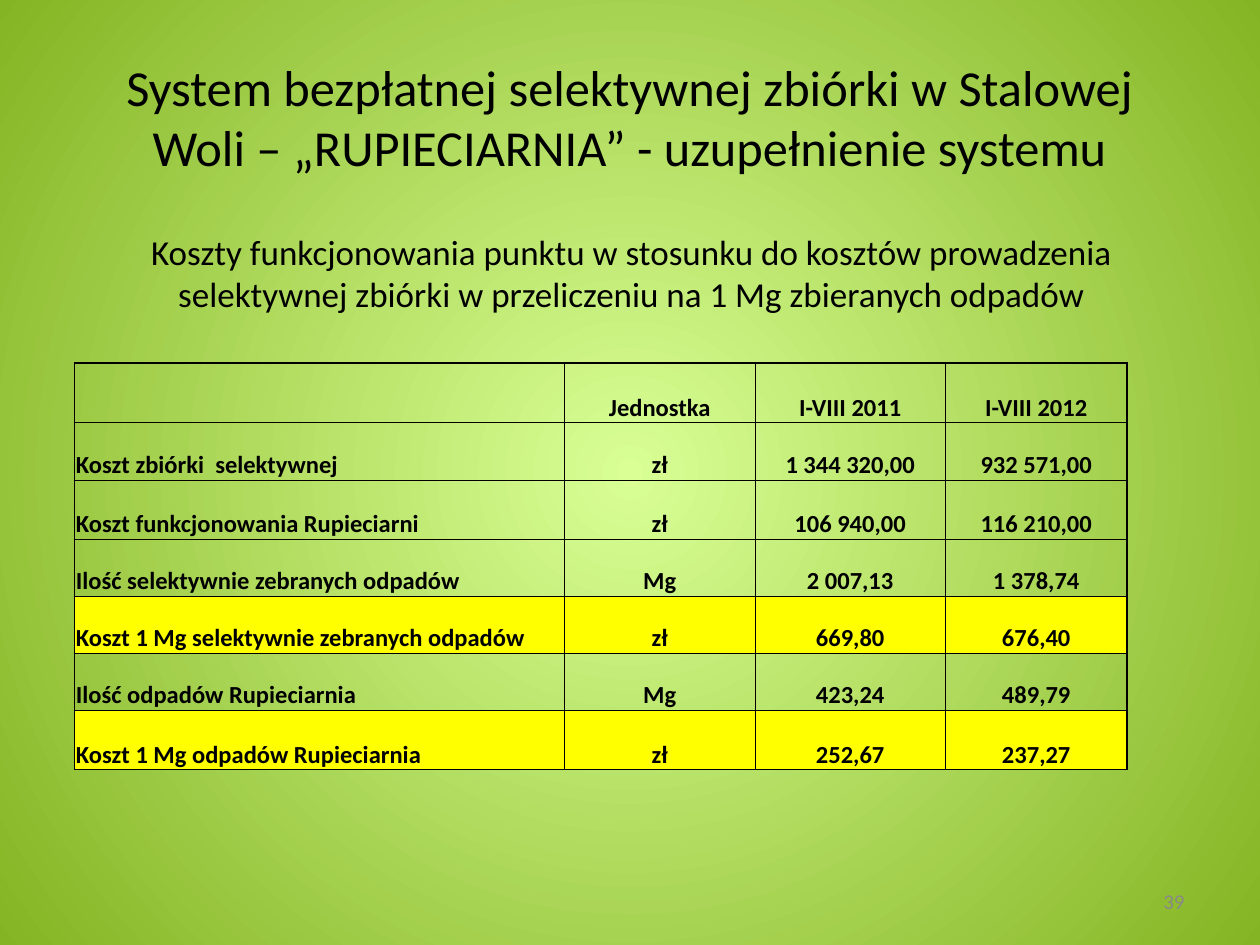
from lxml.etree import SubElement
from pptx import Presentation
from pptx.dml.color import RGBColor
from pptx.enum.text import MSO_ANCHOR, PP_ALIGN
from pptx.oxml import parse_xml
from pptx.oxml.ns import nsdecls, qn
from pptx.util import Cm, Pt

COLORS = {
    "text": "000000",
    "border": "000000",
    "highlight": "FFFF00",
    "center": "D9FF95",
    "edge": "84B423",
    "number": "898989",
}


def write(frame, text, size, color="text", bold=False, align=PP_ALIGN.CENTER,
          anchor=MSO_ANCHOR.TOP):
    frame.word_wrap = True
    frame.vertical_anchor = anchor
    paragraph = frame.paragraphs[0]
    paragraph.alignment = align
    run = paragraph.add_run()
    run.text = text
    run.font.name = "Calibri"
    run.font.size = Pt(size)
    run.font.bold = bold
    run.font.color.rgb = RGBColor.from_string(COLORS[color])
    return paragraph


def add_border(cell, side, position, width):
    cell._tc.get_or_add_tcPr().insert(position, parse_xml(
        f'<a:{side} {nsdecls("a")} w="{Pt(width)}"><a:solidFill>'
        f'<a:srgbClr val="{COLORS["border"]}"/></a:solidFill></a:{side}>'))


presentation = Presentation()
presentation.slide_width = Cm(25.4)
presentation.slide_height = Cm(19.05)
slide = presentation.slides.add_slide(presentation.slide_layouts[1])

# Background: gradient running out from the middle
backdrop = slide.background.fill
backdrop.gradient()
for stop, position, color in zip(backdrop.gradient_stops, (0, 1), ("center", "edge")):
    stop.position = position
    stop.color.rgb = RGBColor.from_string(COLORS[color])
gradient = slide.element.find(f".//{qn('a:gradFill')}")
gradient.remove(gradient.find(qn("a:lin")))
gradient.append(parse_xml(
    f'<a:path {nsdecls("a")} path="circle">'
    '<a:fillToRect l="50000" t="50000" r="50000" b="50000"/></a:path>'))

# Title and introduction
title = slide.shapes.title
title.left, title.top, title.width, title.height = Cm(1.27), Cm(0.76), Cm(22.86), Cm(3.18)
write(title.text_frame,
      "System bezpłatnej selektywnej zbiórki w Stalowej Woli – „RUPIECIARNIA” - "
      "uzupełnienie systemu", size=28.8, anchor=MSO_ANCHOR.MIDDLE)

intro = slide.placeholders[1]
intro.left, intro.top, intro.width, intro.height = Cm(1.3), Cm(4.52), Cm(22.86), Cm(12.57)
intro_paragraph = write(
    intro.text_frame,
    "Koszty funkcjonowania punktu w stosunku do kosztów prowadzenia selektywnej "
    "zbiórki w przeliczeniu na 1 Mg zbieranych odpadów", size=20)
intro_format = intro_paragraph._p.get_or_add_pPr()
intro_format.set("marL", "0")
intro_format.set("indent", "0")
SubElement(intro_format, qn("a:buNone"))

# Cost table
costs = [
    ("", "Jednostka", "I-VIII 2011", "I-VIII 2012"),
    ("Koszt zbiórki  selektywnej", "zł", "1 344 320,00", "932 571,00"),
    ("Koszt funkcjonowania Rupieciarni", "zł", "106 940,00", "116 210,00"),
    ("Ilość selektywnie zebranych odpadów", "Mg", "2 007,13", "1 378,74"),
    ("Koszt 1 Mg selektywnie zebranych odpadów", "zł", "669,80", "676,40"),
    ("Ilość odpadów Rupieciarnia", "Mg", "423,24", "489,79"),
    ("Koszt 1 Mg odpadów Rupieciarnia", "zł", "252,67", "237,27"),
]
highlighted_rows = (4, 6)
column_widths = (9.88, 3.84, 3.84, 3.66)
row_heights = (1.2, 1.16, 1.19, 1.15, 1.15, 1.15, 1.2)
last_row, last_column = len(costs) - 1, len(column_widths) - 1

cost_table = slide.shapes.add_table(
    len(costs), len(column_widths), Cm(1.5), Cm(7.32),
    Cm(sum(column_widths)), Cm(sum(row_heights))).table
cost_table.first_row = cost_table.horz_banding = False
for column, width in zip(cost_table.columns, column_widths):
    column.width = Cm(width)
for row, height in zip(cost_table.rows, row_heights):
    row.height = Cm(height)

for r, values in enumerate(costs):
    for c, value in enumerate(values):
        cell = cost_table.cell(r, c)
        cell.margin_left = cell.margin_top = cell.margin_right = Cm(0.03)
        cell.margin_bottom = 0
        cell.vertical_anchor = MSO_ANCHOR.BOTTOM
        if r in highlighted_rows:
            cell.fill.solid()
            cell.fill.fore_color.rgb = RGBColor.from_string(COLORS["highlight"])
        else:
            cell.fill.background()
        if value:
            write(cell.text_frame, value, size=14, bold=True,
                  align=PP_ALIGN.CENTER if c else PP_ALIGN.LEFT,
                  anchor=None)
            cell.vertical_anchor = MSO_ANCHOR.BOTTOM
        # Heavier lines around the table and under its header
        heavy_sides = {
            "lnL": c == 0,
            "lnR": c == last_column,
            "lnT": r in (0, 1),
            "lnB": r in (0, last_row),
        }
        for position, (side, heavy) in enumerate(heavy_sides.items()):
            add_border(cell, side, position, 1 if heavy else 0.5)

# Slide number
number = slide.shapes.add_textbox(Cm(18.2), Cm(17.66), Cm(5.93), Cm(1.01))
write(number.text_frame, "39", size=12, color="number", align=PP_ALIGN.RIGHT,
      anchor=MSO_ANCHOR.MIDDLE)

presentation.save("out.pptx")
